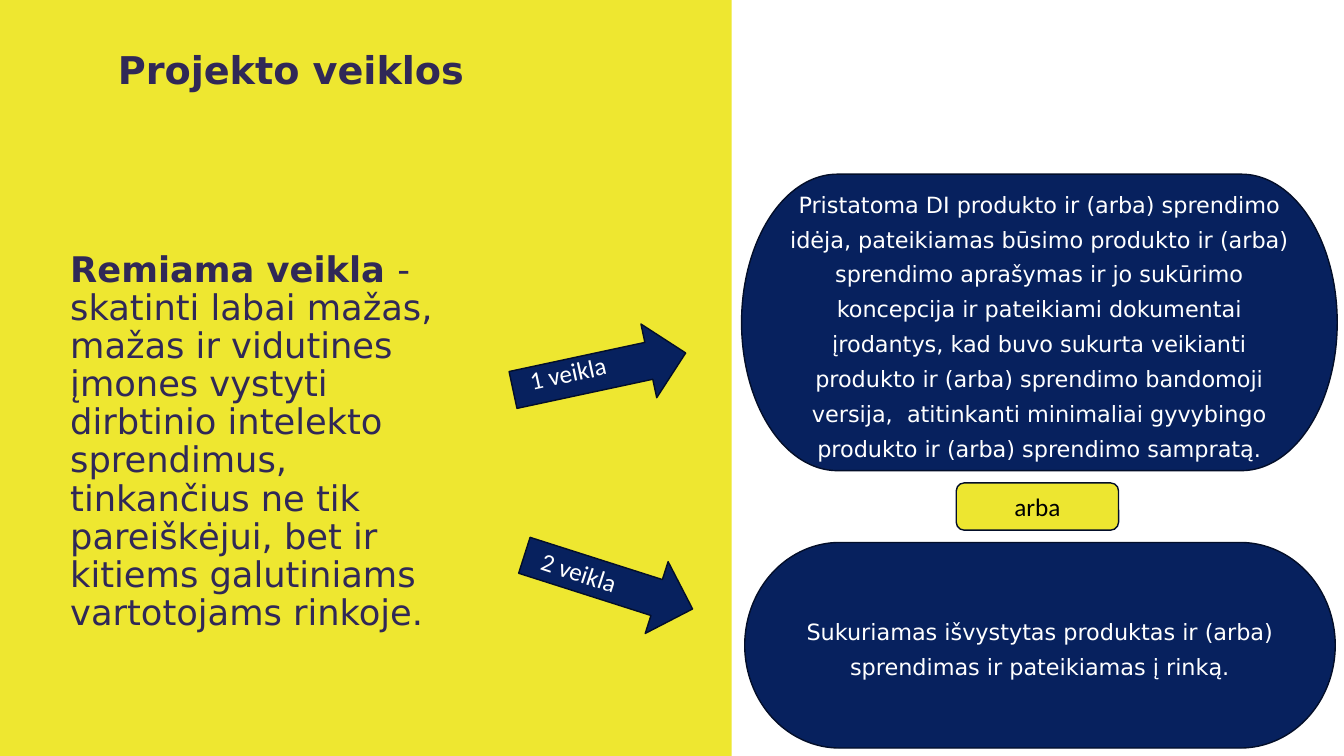
from dataclasses import dataclass

from pptx import Presentation
from pptx import util as u
from pptx.dml.color import RGBColor
from pptx.enum import shapes, text
from pptx.oxml import ns, xmlchemy

NAVY, OUTLINE, YELLOW, INK = "07215E", "030E29", "EEE730", "302857"
WHITE, BLACK = "FFFFFF", "000000"
HEADING_FONT, LABEL_FONT = "DejaVu Sans", "Calibri"
Preset = shapes.MSO_SHAPE
Align = text.PP_ALIGN


@dataclass
class Frame:
    left: float
    top: float
    width: float
    height: float
    rotation: float = 0

    def lengths(self):
        return [u.Cm(n) for n in (self.left, self.top, self.width, self.height)]


@dataclass
class Activity:
    label: str
    arrow: Frame
    caption: Frame
    result: Frame
    description: str


ACTIVITIES = [
    Activity(
        "1 veikla",
        Frame(12.88, 8.41, 4.45, 1.9, 347.9),
        Frame(13.08, 8.81, 3.1, 1.02, 347.7),
        Frame(18.69, 4.39, 15.01, 7.47),
        "Pristatoma DI produkto ir (arba) sprendimo idėja, pateikiamas būsimo "
        "produkto ir (arba) sprendimo aprašymas ir jo sukūrimo koncepcija ir "
        "pateikiami dokumentai įrodantys, kad buvo sukurta veikianti produkto "
        "ir (arba) sprendimo bandomoji versija,  atitinkanti minimaliai "
        "gyvybingo produkto ir (arba) sprendimo sampratą.",
    ),
    Activity(
        "2 veikla",
        Frame(13.11, 13.72, 4.45, 1.9, 17.7),
        Frame(13.36, 14, 3.1, 1.02, 18.2),
        Frame(18.77, 13.67, 14.88, 5.18),
        "Sukuriamas išvystytas produktas ir (arba) sprendimas ir pateikiamas į rinką.",
    ),
]


def paint(target, color: str):
    target.solid()
    target.fore_color.rgb = RGBColor.from_string(color)


def write(box, *pieces, size=18, font=LABEL_FONT, color=WHITE, align=Align.LEFT,
          spacing=1.0, bold_first=False, anchor=text.MSO_ANCHOR.MIDDLE, bottom=0.13):
    frame = box.text_frame
    frame.word_wrap = True
    frame.auto_size = text.MSO_AUTO_SIZE.NONE
    frame.vertical_anchor = anchor
    frame.margin_left = frame.margin_right = u.Cm(0.25)
    frame.margin_top, frame.margin_bottom = u.Cm(0.13), u.Cm(bottom)
    para = frame.paragraphs[0]
    para.alignment = align
    para.line_spacing = spacing
    para.space_before = u.Pt(0)
    for index, piece in enumerate(pieces):
        span = para.add_run()
        span.text = piece
        span.font.size = u.Pt(size)
        span.font.name = font
        span.font.bold = bold_first and index == 0
        span.font.color.rgb = RGBColor.from_string(color)
    return para


def add_block(page, preset, frame: Frame, fill: str, outline: str = ""):
    block = page.shapes.add_shape(preset, *frame.lengths())
    block.rotation = frame.rotation
    block.shadow.inherit = False
    paint(block.fill, fill)
    if outline:
        paint(block.line.fill, outline)
        block.line.width = u.Pt(1)
    else:
        block.line.fill.background()
    return block


def place(box, frame: Frame):
    box.left, box.top, box.width, box.height = frame.lengths()


def remove_bullet(para):
    properties = para._p.get_or_add_pPr()
    properties.set("marL", "0")
    properties.set("indent", "0")
    properties.append(xmlchemy.OxmlElement("a:buNone"))


def add_headings(page):
    title, body = page.shapes.title, page.placeholders[1]
    panel = add_block(page, Preset.RECTANGLE, Frame(-0.03, 0, 18.47, 19.05), YELLOW)
    title._element.addprevious(panel._element)

    place(title, Frame(2.72, 0.99, 15.9, 2.64))
    write(title, "Projekto veiklos", size=27.3, font=HEADING_FONT, color=INK,
          spacing=0.9, bold_first=True, bottom=1.14)

    place(body, Frame(1.52, 5.54, 10.69, 12.19))
    para = write(
        body, "Remiama veikla ",
        "- skatinti labai mažas, mažas ir vidutines įmones vystyti dirbtinio "
        "intelekto sprendimus, tinkančius ne tik pareiškėjui, bet ir kitiems "
        "galutiniams vartotojams rinkoje.",
        size=25.2, font=HEADING_FONT, color=INK, spacing=0.9,
        bold_first=True, bottom=1.1)
    remove_bullet(para)


def add_activity(page, activity: Activity):
    add_block(page, Preset.RIGHT_ARROW, activity.arrow, NAVY, OUTLINE)
    result = add_block(page, Preset.FLOWCHART_TERMINATOR, activity.result, NAVY, OUTLINE)
    write(result, activity.description, size=16, font=HEADING_FONT,
          align=Align.CENTER, spacing=1.3)
    caption = page.shapes.add_textbox(*activity.caption.lengths())
    caption.rotation = activity.caption.rotation
    write(caption, activity.label, anchor=text.MSO_ANCHOR.TOP)


def main():
    deck = Presentation()
    deck.slide_width, deck.slide_height = u.Cm(33.87), u.Cm(19.05)
    page = deck.slides.add_slide(deck.slide_layouts[1])
    add_headings(page)
    for activity in ACTIVITIES:
        add_activity(page, activity)
    choice = add_block(page, Preset.ROUNDED_RECTANGLE,
                       Frame(24.1, 12.17, 4.09, 1.19), "EDE630", OUTLINE)
    write(choice, "arba", color=BLACK, align=Align.CENTER)
    deck.save("out.pptx")


if __name__ == "__main__":
    main()
